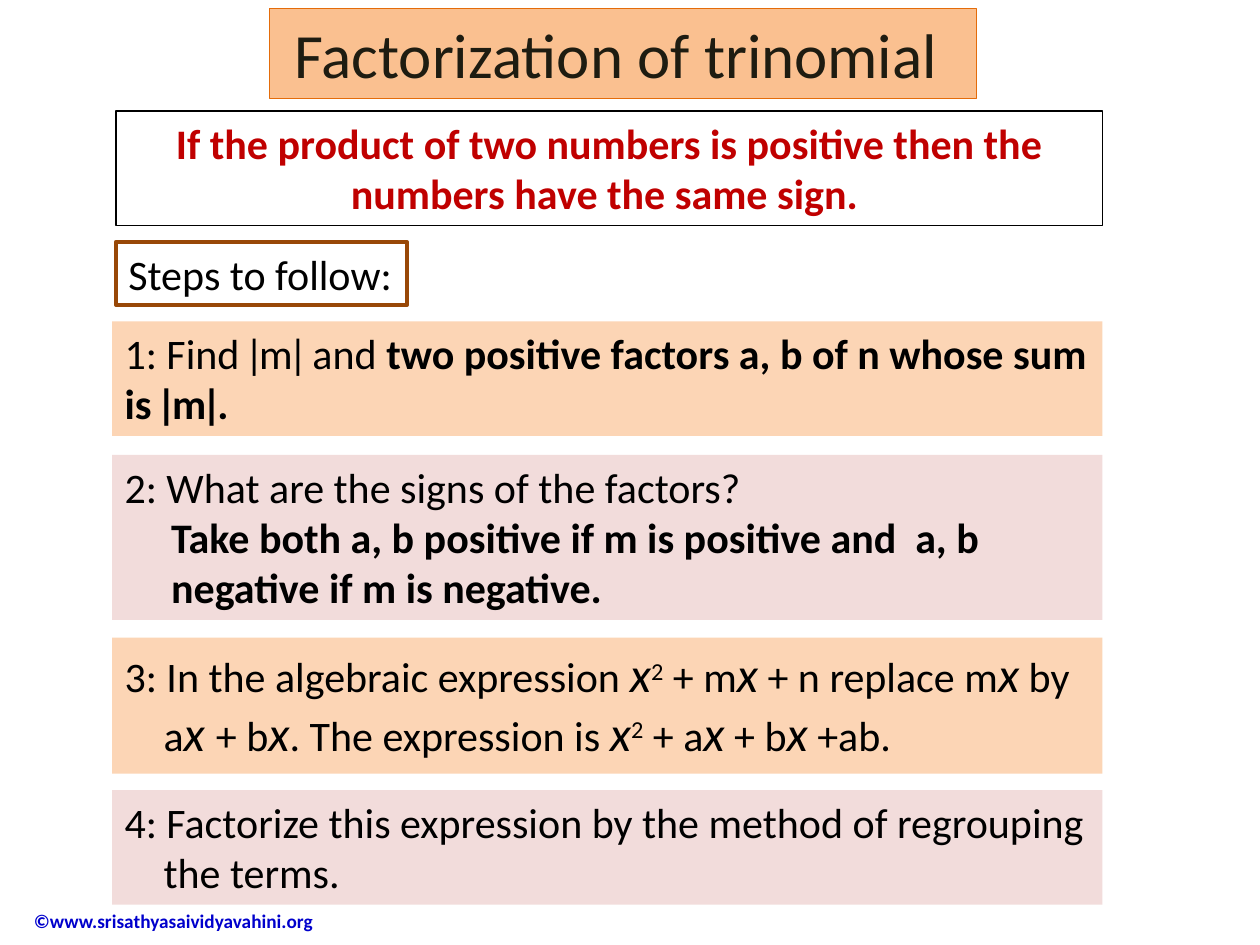
from pptx import Presentation
from pptx.dml.color import RGBColor
from pptx.enum.text import MSO_ANCHOR, MSO_AUTO_SIZE, PP_ALIGN
from pptx.enum.shapes import MSO_SHAPE
from pptx.util import Inches, Pt

BLACK, PEACH, PINK = "000000", "FCD5B5", "F2DCDB"


def rgb(value):
    return RGBColor.from_string(value)


class Deck:
    """Holds the text style and the slide being built."""

    font = "Calibri"
    size = 24
    variable_size = 28

    def __init__(self, width, height):
        self.prs = Presentation()
        self.prs.slide_width, self.prs.slide_height = Inches(width), Inches(height)
        self.s = self.prs.slides.add_slide(self.prs.slide_layouts[6])

    def box(self, left, top, width, height, fill=None, line=None, weight=0.75):
        sp = self.s.shapes.add_shape(MSO_SHAPE.RECTANGLE, Inches(left), Inches(top),
                                     Inches(width), Inches(height))
        sp.shadow.inherit = False
        if fill:
            sp.fill.solid()
            sp.fill.fore_color.rgb = rgb(fill)
        else:
            sp.fill.background()
        if line:
            sp.line.color.rgb = rgb(line)
            sp.line.width = Pt(weight)
        else:
            sp.line.fill.background()
        return sp

    def frame(self, sp, wrap=True, anchor=MSO_ANCHOR.TOP, grow=True):
        tf = sp.text_frame
        tf.word_wrap = wrap
        tf.vertical_anchor = anchor
        tf.auto_size = MSO_AUTO_SIZE.SHAPE_TO_FIT_TEXT if grow else MSO_AUTO_SIZE.NONE
        return tf

    def paragraph(self, p, runs, size=None, color=BLACK, align=PP_ALIGN.LEFT,
                  margin=0, indent=0):
        """Each run is (text, marks): b bold, v italic variable, ^ superscript."""
        p.alignment = align
        pPr = p._p.get_or_add_pPr()
        pPr.set("marL", str(Inches(margin)))
        pPr.set("indent", str(Inches(indent)))
        for text, marks in runs:
            r = p.add_run()
            r.text = text
            r.font.name = self.font
            r.font.size = Pt(self.variable_size if "v" in marks else size or self.size)
            r.font.color.rgb = rgb(color)
            r.font.bold = "b" in marks
            r.font.italic = "v" in marks
            if "^" in marks:
                r._r.get_or_add_rPr().set("baseline", "30000")

    def step(self, top, height, fill, paragraphs):
        tf = self.frame(self.box(0.89, top, 7.86, height, fill))
        for i, (runs, margin, indent) in enumerate(paragraphs):
            p = tf.add_paragraph() if i else tf.paragraphs[0]
            self.paragraph(p, runs, margin=margin, indent=indent)


def main():
    deck = Deck(10, 7.5)

    # Footer
    footer = deck.s.shapes.add_textbox(Inches(-0.33), Inches(7.1), Inches(3.02), Inches(0.41))
    tf = deck.frame(footer, anchor=MSO_ANCHOR.MIDDLE, grow=False)
    deck.paragraph(tf.paragraphs[0], [("©www.srisathyasaividyavahini.org", "b")],
                   size=11, color="0000CC", margin=0.5)

    # Rule
    tf = deck.frame(deck.box(0.92, 0.88, 7.83, 0.91, "FFFFFF", BLACK))
    rule = "If the product of two numbers is positive then the numbers have the same sign. "
    deck.paragraph(tf.paragraphs[0], [(rule, "b")], color="C00000", align=PP_ALIGN.CENTER)

    # Steps
    x, squared = ("x", "v"), ("2", "^")
    hang = (0.31, -0.31)
    deck.step(2.55, 0.91, PEACH, [
        ([("1: Find ǀmǀ and ", ""),
          ("two positive factors a, b of n whose sum is ǀmǀ.", "b")], 0, 0)])
    deck.step(3.61, 1.31, PINK, [
        ([("2: What are the signs of the factors?", "")], 0, 0),
        ([("Take both a, b positive if m is positive and  a, b negative if m is negative.",
           "b")], 0.37, 0)])
    deck.step(5.06, 1.08, PEACH, [
        ([("3: In the algebraic expression ", ""), x, squared, (" + m", ""), x,
          (" + n replace m", ""), x, (" by a", ""), ("x ", "v"), ("+ b", ""), x,
          (". The expression is ", ""), x, squared, (" + a", ""), x,
          (" + b", ""), x, (" +ab.", "")], *hang)])
    deck.step(6.27, 0.91, PINK, [
        ([("4: Factorize this expression by the method of regrouping the terms.", "")],
         *hang)])

    # Steps heading
    tf = deck.frame(deck.box(0.92, 1.92, 2.31, 0.5, line="984807", weight=2.25), wrap=False)
    deck.paragraph(tf.paragraphs[0], [("Steps to follow:", "")])

    # Title
    tf = deck.frame(deck.box(2.14, 0.07, 5.61, 0.71, "FAC090", "E46C0A"), wrap=False)
    deck.paragraph(tf.paragraphs[0], [("Factorization of trinomial ", "")],
                   size=36, color="1E1C11", align=PP_ALIGN.CENTER)

    deck.prs.save("out.pptx")


if __name__ == "__main__":
    main()
